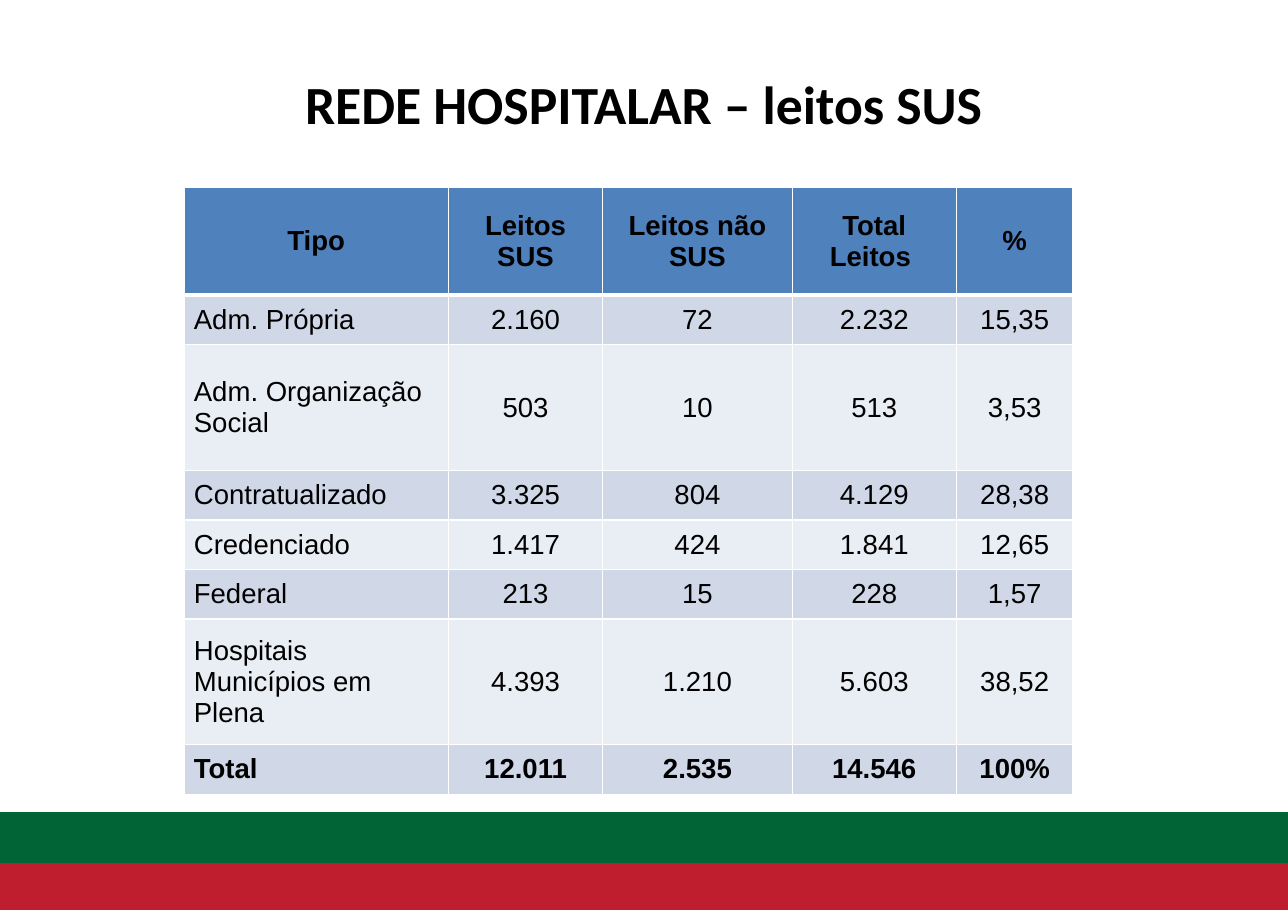
from dataclasses import dataclass

import pptx
import pptx.dml.color
import pptx.enum.shapes
import pptx.enum.text
import pptx.oxml
import pptx.oxml.ns
import pptx.util
from pptx.util import Inches


@dataclass(frozen=True)
class Theme:
    black: str = "000000"
    white: str = "FFFFFF"
    header: str = "4F81BD"
    band_dark: str = "D0D8E8"
    band_light: str = "E9EDF4"
    green: str = "006436"
    red: str = "BE1E2E"
    title_font: str = "Calibri"
    table_font: str = "Arial"
    title_size: float = 35.1
    table_size: float = 18
    thin: float = 1
    thick: float = 3


THEME = Theme()

COL_WIDTHS = [2.4, 1.4, 1.72, 1.49, 1.06]
ROW_HEIGHTS = [0.98, 0.45, 1.14, 0.45, 0.45, 0.45, 1.14, 0.45]
BEDS = [
    ["Tipo", "Leitos SUS", "Leitos não SUS", "Total\nLeitos ", "%"],
    ["Adm. Própria", "2.160", "72", "2.232", "15,35"],
    ["Adm. Organização Social", "503", "10", "513", "3,53"],
    ["Contratualizado", "3.325", "804", "4.129", "28,38"],
    ["Credenciado", "1.417", "424", "1.841", "12,65"],
    ["Federal", "213", "15", "228", "1,57"],
    ["Hospitais Municípios em Plena", "4.393", "1.210", "5.603", "38,52"],
    ["Total", "12.011", "2.535", "14.546", "100%"],
]


def rgb(color):
    return pptx.dml.color.RGBColor.from_string(color)


def write_text(tf, text, *, font, size, bold=False, color=THEME.black, align="LEFT"):
    for i, line in enumerate(text.split("\n")):
        p = tf.add_paragraph() if i else tf.paragraphs[0]
        p.alignment = getattr(pptx.enum.text.PP_ALIGN, align)
        r = p.add_run()
        r.text = line
        r.font.name = font
        r.font.size = pptx.util.Pt(size)
        r.font.bold = bold
        r.font.color.rgb = rgb(color)


def add_stripe(s, top, color):
    sp = s.shapes.add_shape(
        pptx.enum.shapes.MSO_SHAPE.RECTANGLE,
        0, Inches(top), Inches(11.69), Inches(0.45),
    )
    sp.shadow.inherit = False
    sp.fill.solid()
    sp.fill.fore_color.rgb = rgb(color)
    sp.line.color.rgb = rgb(color)
    sp.line.width = pptx.util.Pt(0.75)


def add_title(s, text):
    sp = s.shapes.add_textbox(Inches(2.67), Inches(0.59), Inches(6.42), Inches(0.69))
    tf = sp.text_frame
    tf.word_wrap = False
    tf.auto_size = pptx.enum.text.MSO_AUTO_SIZE.SHAPE_TO_FIT_TEXT
    write_text(tf, text, font=THEME.title_font, size=THEME.title_size, bold=True)


def set_border(cell, side, width):
    ns = pptx.oxml.ns.nsdecls("a")
    cell._tc.get_or_add_tcPr().append(pptx.oxml.parse_xml(
        f'<a:{side} {ns} w="{pptx.util.Pt(width)}"><a:solidFill>'
        f'<a:srgbClr val="{THEME.white}"/></a:solidFill></a:{side}>'
    ))


def format_cell(cell, row, col):
    cell.margin_left = cell.margin_right = Inches(0.09)
    cell.margin_top = cell.margin_bottom = Inches(0.04)
    cell.vertical_anchor = pptx.enum.text.MSO_ANCHOR.MIDDLE
    set_border(cell, "lnL", THEME.thin)
    set_border(cell, "lnR", THEME.thin)
    set_border(cell, "lnT", THEME.thick if row == 1 else THEME.thin)
    set_border(cell, "lnB", THEME.thick if row == 0 else THEME.thin)
    band = THEME.band_dark if row % 2 else THEME.band_light
    cell.fill.solid()
    cell.fill.fore_color.rgb = rgb(band if row else THEME.header)
    write_text(
        cell.text_frame, BEDS[row][col],
        font=THEME.table_font, size=THEME.table_size,
        bold=row in (0, len(BEDS) - 1),
        align="LEFT" if row and col == 0 else "CENTER",
    )


def add_beds_table(s):
    table = s.shapes.add_table(
        len(BEDS), len(COL_WIDTHS), Inches(1.67), Inches(1.7),
        Inches(sum(COL_WIDTHS)), Inches(sum(ROW_HEIGHTS)),
    ).table
    for column, width in zip(table.columns, COL_WIDTHS):
        column.width = Inches(width)
    for i, height in enumerate(ROW_HEIGHTS):
        table.rows[i].height = Inches(height)
        for j in range(len(COL_WIDTHS)):
            format_cell(table.cell(i, j), i, j)


def main():
    prs = pptx.Presentation()
    prs.slide_width = Inches(11.69)
    prs.slide_height = Inches(8.27)
    s = prs.slides.add_slide(prs.slide_layouts[6])
    add_stripe(s, 7.81, THEME.red)
    add_stripe(s, 7.38, THEME.green)
    add_beds_table(s)
    add_title(s, "REDE HOSPITALAR – leitos SUS")
    prs.save("out.pptx")


if __name__ == "__main__":
    main()
